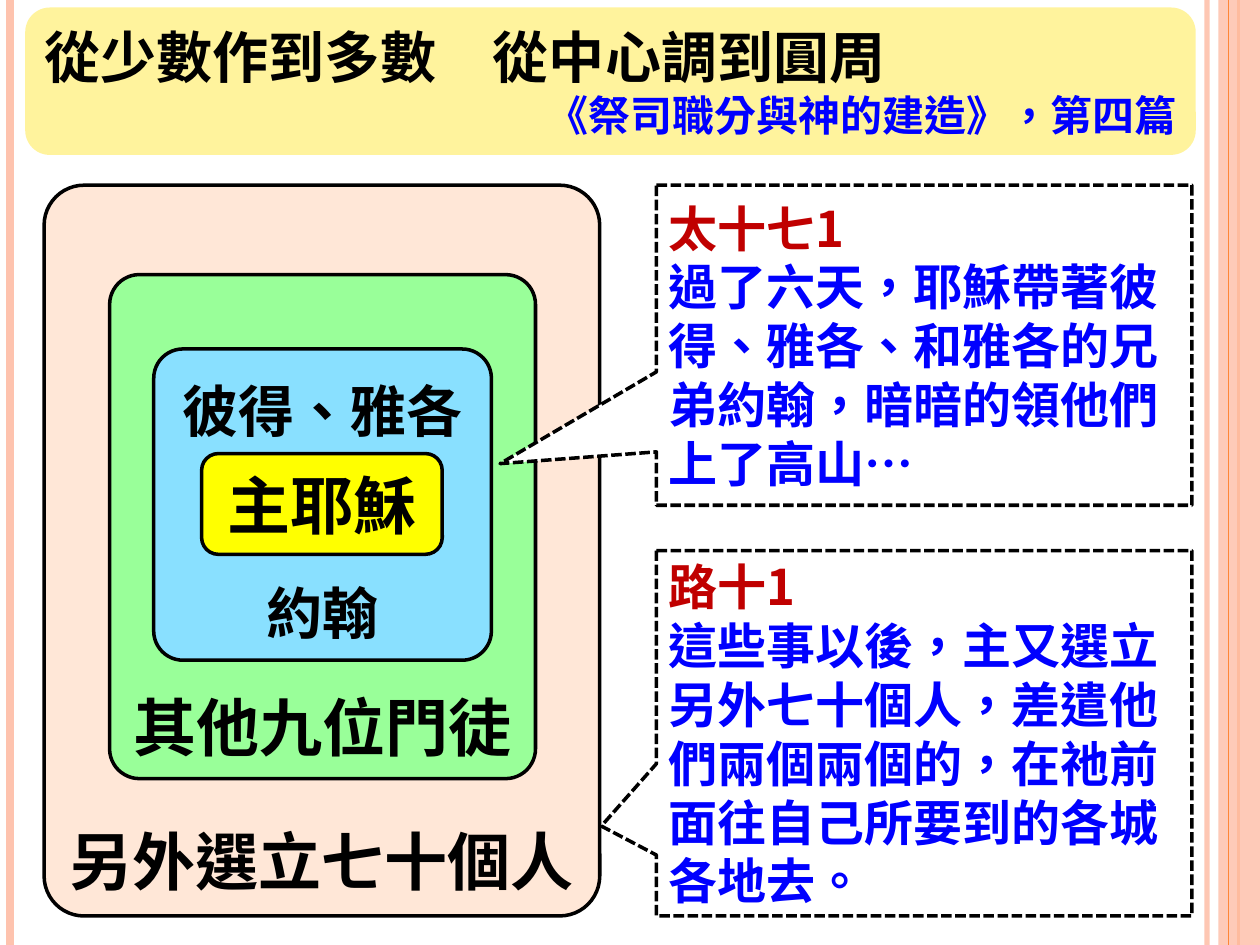
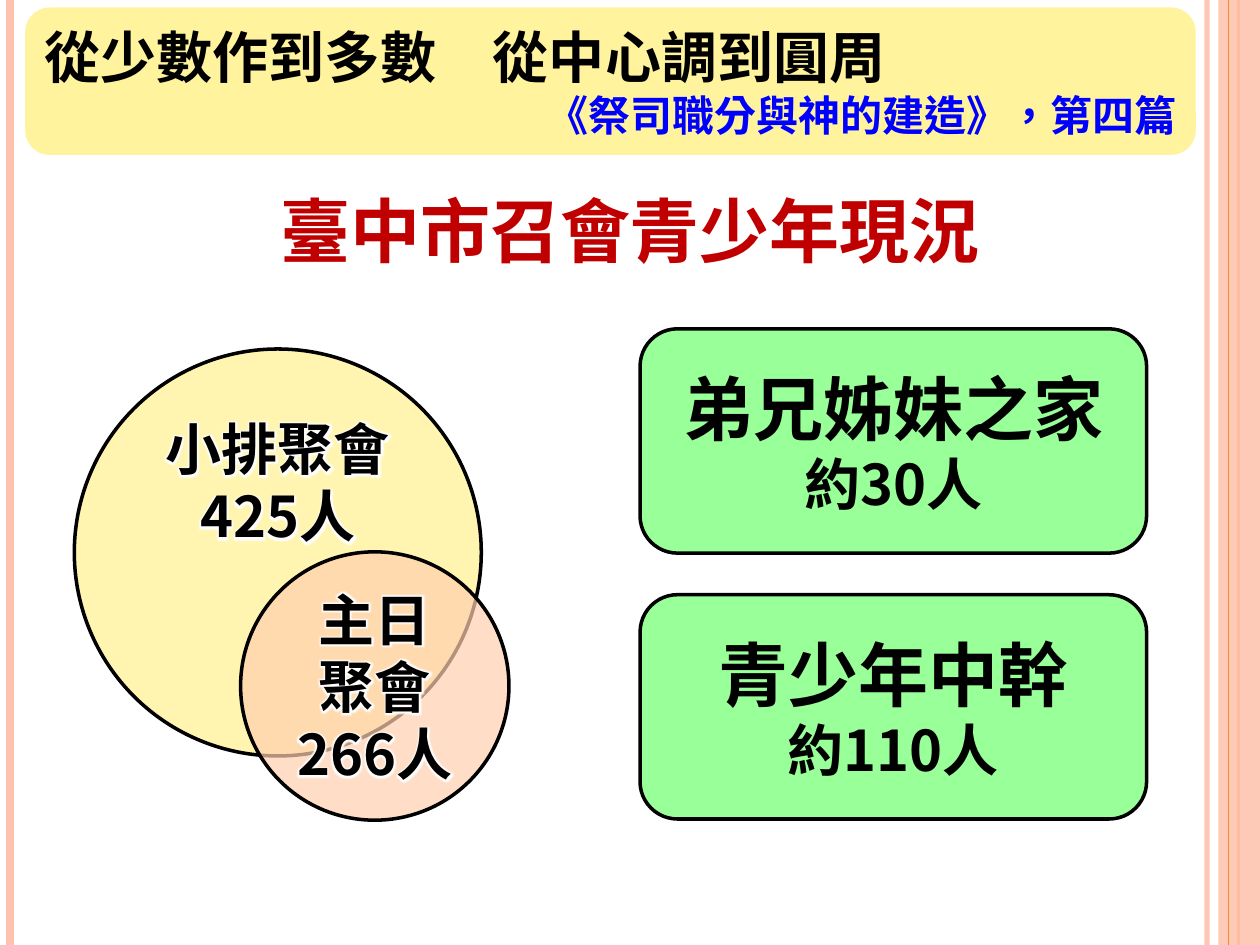
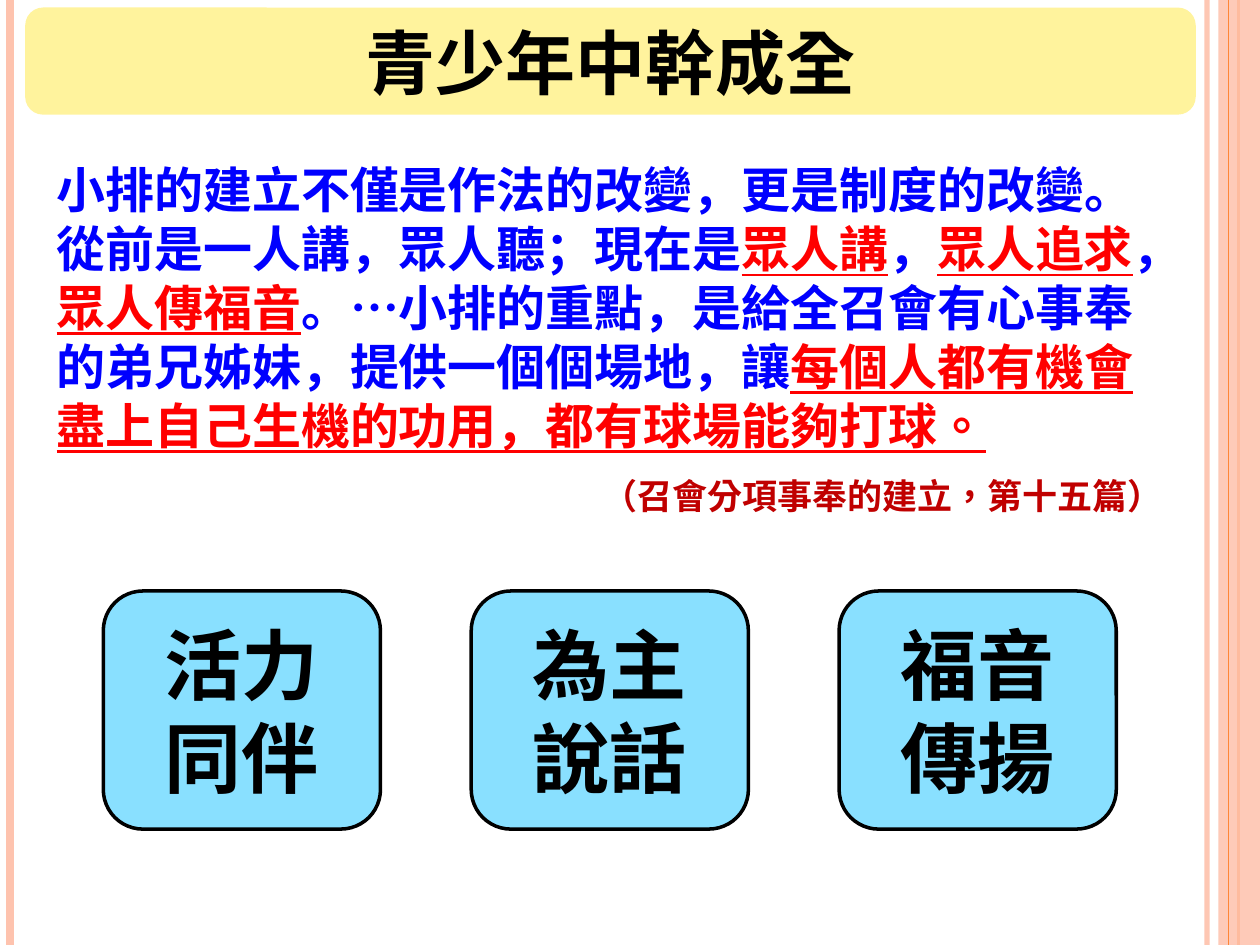
from dataclasses import dataclass
from lxml.etree import SubElement
from pptx import Presentation
from pptx.dml.color import RGBColor
from pptx.enum.dml import MSO_LINE
from pptx.enum.lang import MSO_LANGUAGE_ID
from pptx.enum.shapes import MSO_CONNECTOR, MSO_SHAPE
from pptx.enum.text import MSO_ANCHOR, PP_ALIGN
from pptx.oxml.ns import qn
from pptx.util import Inches, Pt

COLORS = {
    "black": "000000", "white": "FFFFFF", "blue": "0000FF", "red": "FF0000",
    "crimson": "C00000", "salmon": "FEC3AE", "orange": "FE8637",
    "banner": "FFF39D", "peach": "FFE7D7", "apricot": "FFCFAF",
    "green": "99FF99", "sky": "89E0FF", "yellow": "FFFF00",
}
FONT = "Noto Sans CJK SC"
LEFT, CENTER, RIGHT = PP_ALIGN.LEFT, PP_ALIGN.CENTER, PP_ALIGN.RIGHT
TAIWAN = MSO_LANGUAGE_ID.TRADITIONAL_CHINESE
MAINLAND = MSO_LANGUAGE_ID.SIMPLIFIED_CHINESE
SLIDE_WIDTH, SLIDE_HEIGHT = 10, 7.5


@dataclass
class Span:
    text: str
    color: str = ""
    size: float = 0
    underline: bool = False
    language: MSO_LANGUAGE_ID = TAIWAN


@dataclass
class Line:
    content: object
    size: float
    color: str = "black"
    align: PP_ALIGN = CENTER
    before: float = 0


def rgb(name):
    return RGBColor.from_string(COLORS[name])


def set_opacity(element, percent):
    color = next(element.iter(qn("a:srgbClr")))
    SubElement(color, qn("a:alpha"), val=str(percent * 1000))


def add_span(para, item):
    for index, text in enumerate(item.text.split("\n")):
        if index:
            para.add_line_break()
        span = para.add_run()
        span.text = text
        span.font.language_id = item.language
        if item.color:
            span.font.color.rgb = rgb(item.color)
        if item.size:
            span.font.size = Pt(item.size)
        if item.underline:
            span.font.underline = True


def write(box, lines, anchor=MSO_ANCHOR.MIDDLE):
    frame = box.text_frame
    frame.word_wrap = True
    frame.vertical_anchor = anchor
    for index, line in enumerate(lines):
        para = frame.add_paragraph() if index else frame.paragraphs[0]
        para.alignment = line.align
        para.space_before = Pt(line.before)
        para.font.size = Pt(line.size)
        para.font.bold = True
        para.font.name = FONT
        para.font.color.rgb = rgb(line.color)
        defaults = para._p.pPr.find(qn("a:defRPr"))
        SubElement(defaults, qn("a:ea"), typeface=FONT)
        spans = [Span(line.content)] if isinstance(line.content, str) else line.content
        for item in spans:
            add_span(para, item)


def add_glow(box):
    for para in box.text_frame.paragraphs:
        for span in para.runs:
            effects = SubElement(span._r.get_or_add_rPr(), qn("a:effectLst"))
            glow = SubElement(effects, qn("a:glow"), rad=str(Pt(5)))
            SubElement(glow, qn("a:srgbClr"), val=COLORS["white"])


def add_box(page, kind, area, fill, outline="black", opacity=100, adjust=()):
    box = page.shapes.add_shape(kind, *map(Inches, area))
    box.shadow.inherit = False
    box.element.remove(box.element.find(qn("p:style")))
    box.fill.solid()
    box.fill.fore_color.rgb = rgb(fill)
    if opacity < 100:
        set_opacity(box.element.spPr, opacity)
    if outline:
        box.line.color.rgb = rgb(outline)
        box.line.width = Pt(2)
    else:
        box.line.fill.background()
    for index, value in enumerate(adjust):
        box.adjustments[index] = value
    return box


def add_rounded(page, area, fill, lines, anchor=MSO_ANCHOR.MIDDLE, **options):
    box = add_box(page, MSO_SHAPE.ROUNDED_RECTANGLE, area, fill, **options)
    write(box, lines, anchor)


def add_text(page, area, lines):
    write(page.shapes.add_textbox(*map(Inches, area)), lines)


def add_stripe(page, left, color, width, opacity=100):
    stripe = page.shapes.add_connector(
        MSO_CONNECTOR.STRAIGHT, Inches(left), 0, Inches(left), Inches(SLIDE_HEIGHT))
    stripe.line.color.rgb = rgb(color)
    stripe.line.width = Pt(width)
    if opacity < 100:
        set_opacity(stripe.element.spPr, opacity)
    SubElement(stripe.element.spPr, qn("a:effectLst"))


def add_page(deck, banner_height, banner_lines):
    page = deck.slides.add_slide(deck.slide_layouts[6])
    add_stripe(page, 9.58, "salmon", 3, 93)
    add_stripe(page, 0.08, "salmon", 4.5)
    add_stripe(page, 9.83, "orange", 1.5)
    band = (9.67, 0, SLIDE_WIDTH - 9.67, SLIDE_HEIGHT)
    add_box(page, MSO_SHAPE.RECTANGLE, band, "salmon", outline="", opacity=87)
    add_stripe(page, 9.75, "orange", 0.75)
    add_rounded(page, (0.2, 0.06, 9.29, banner_height), "banner", banner_lines, outline="")
    return page


def add_topic_page(deck):
    return add_page(deck, 1.17, [
        Line("從少數作到多數　從中心調到圓周", 32, align=LEFT),
        Line("《祭司職分與神的建造》，第四篇", 24, "blue", RIGHT),
    ])


def add_nested_groups(page, left, top):
    bottom = MSO_ANCHOR.BOTTOM
    groups = [
        ((0, 0, 4.41, 5.8), "peach", 0.072, bottom, [Line("另外選立七十個人", 36)]),
        ((0.52, 0.71, 3.38, 4), "green", 0.07, bottom, [Line("其他九位門徒", 36)]),
        ((0.87, 1.3, 2.68, 2.47), "sky", 0.094, bottom,
         [Line("彼得、雅各", 32), Line("約翰", 32, before=77)]),
        ((1.25, 2.13, 1.91, 0.8), "yellow", 0.167, MSO_ANCHOR.MIDDLE, [Line("主耶穌", 36)]),
    ]
    for (x, y, width, height), fill, corner, anchor, lines in groups:
        add_rounded(page, (left + x, top + y, width, height), fill, lines, anchor,
                    adjust=[corner])


def add_verse(page, area, pointer, reference, verse):
    callout = add_box(page, MSO_SHAPE.RECTANGULAR_CALLOUT, area, "white", adjust=pointer)
    callout.line.dash_style = MSO_LINE.SQUARE_DOT
    write(callout, [Line(reference, 28, "crimson", LEFT), Line(verse, 28, "blue", LEFT)])


def add_meeting_circles(page, left, top):
    circles = [
        (0, 0, 3.23, "banner", 80, MSO_ANCHOR.TOP, "小排聚會\n425人"),
        (1.32, 1.61, 2.13, "apricot", 70, MSO_ANCHOR.MIDDLE, "主日\n聚會\n266人"),
    ]
    for x, y, diameter, fill, opacity, anchor, label in circles:
        circle = add_box(page, MSO_SHAPE.OVAL, (left + x, top + y, diameter, diameter),
                         fill, opacity=opacity)
        write(circle, [Line(label, 32)], anchor)
        add_glow(circle)


def add_head_counts(page, left, top, pitch):
    counts = [("弟兄姊妹之家", "約30人"), ("青少年中幹", "約110人")]
    for row, (group, count) in enumerate(counts):
        spans = [Span(group + "\n"), Span(count, size=32)]
        add_rounded(page, (left, top + row * pitch, 4.02, 1.78), "green", [Line(spans, 40)])


def add_quotation(page, area):
    def plain(text):
        return Span(text, language=MAINLAND)

    def marked(text, language=MAINLAND):
        return Span(text, "red", underline=True, language=language)

    quotation = [
        plain("小排的建立不僅是作法的改變，更是制度的改變。從前是一人講，眾人聽；現在是"),
        marked("眾人講"),
        plain("，"),
        marked("眾人追求"),
        plain("，"),
        marked("眾人傳福音"),
        plain("。…小排的重點，是給全召會有心事奉的弟兄姊妹，提供一個個場地，讓"),
        marked("每個人都有機會盡上自己生機的功用，都有球場能夠打球"),
        marked("。", TAIWAN),
    ]
    add_text(page, area, [
        Line(quotation, 28, "blue", LEFT, 12),
        Line("（召會分項事奉的建立，第十五篇）", 20, "crimson", RIGHT, 12),
    ])


def add_goals(page, left, top, pitch):
    for column, goal in enumerate(["活力同伴", "為主說話", "福音傳揚"]):
        add_rounded(page, (left + column * pitch, top, 2.2, 1.89), "sky", [Line(goal, 44)])


def build_circles_page(deck):
    page = add_topic_page(deck)
    add_nested_groups(page, 0.35, 1.47)
    add_verse(page, (5.21, 1.47, 4.25, 2.54), (-0.792, 0.37), "太十七1",
              "過了六天，耶穌帶著彼得、雅各、和雅各的兄弟約翰，暗暗的領他們上了高山…")
    add_verse(page, (5.21, 4.37, 4.25, 2.9), (-0.603, 0.254), "路十1",
              "這些事以後，主又選立另外七十個人，差遣他們兩個兩個的，"
              "在祂前面往自己所要到的各城各地去。")


def build_status_page(deck):
    page = add_topic_page(deck)
    add_text(page, (2, 1.39, 6, 0.87), [Line("臺中市召會青少年現況", 40, "crimson")])
    add_meeting_circles(page, 0.59, 2.77)
    add_head_counts(page, 5.08, 2.61, 2.11)


def build_training_page(deck):
    page = add_page(deck, 0.85, [Line("青少年中幹成全", 40)])
    add_quotation(page, (0.35, 1.23, 8.98, 2.91))
    add_goals(page, 0.82, 4.69, 2.92)


def main():
    deck = Presentation()
    deck.slide_width = Inches(SLIDE_WIDTH)
    deck.slide_height = Inches(SLIDE_HEIGHT)
    build_circles_page(deck)
    build_status_page(deck)
    build_training_page(deck)
    deck.save("out.pptx")


if __name__ == "__main__":
    main()
